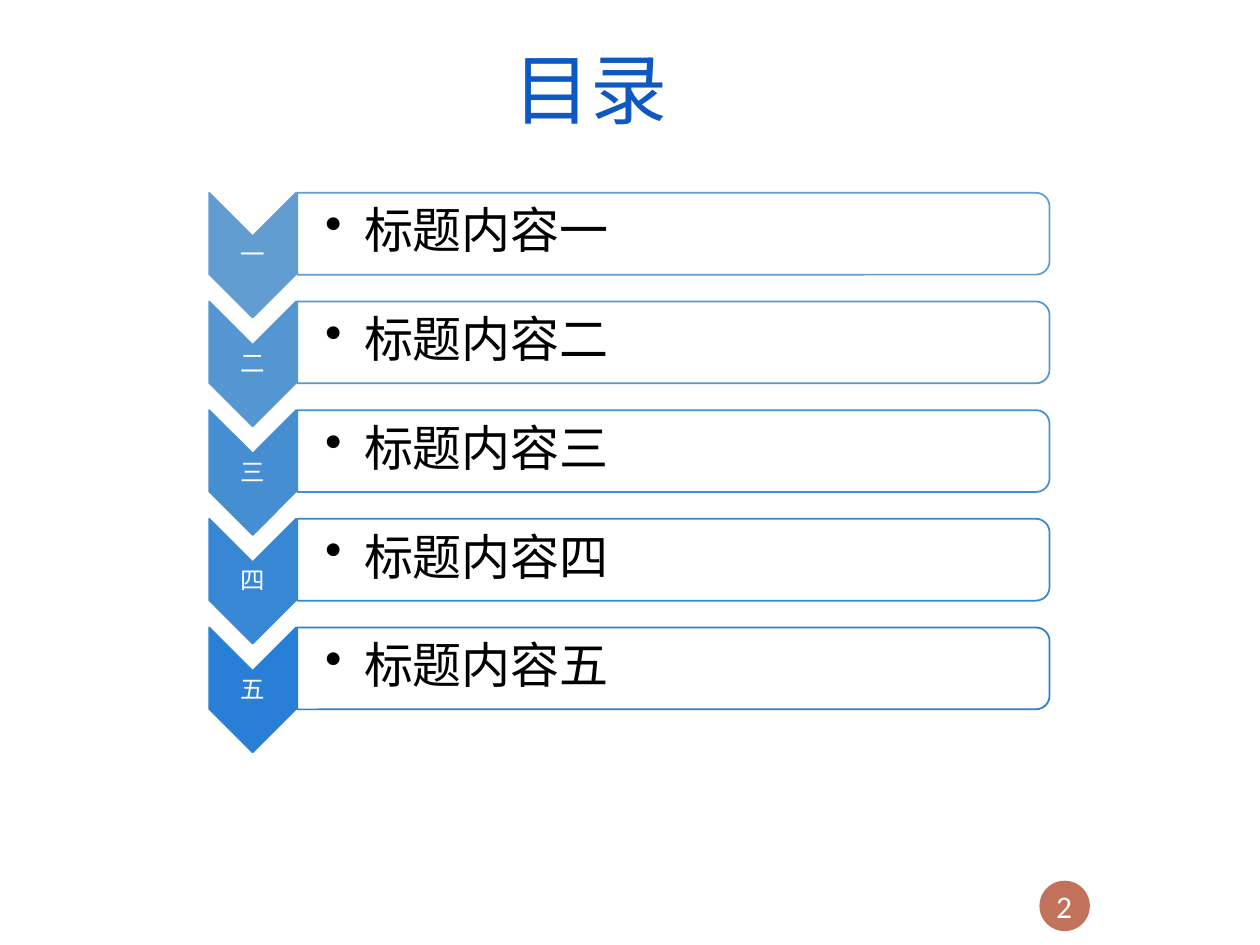
from lxml.etree import SubElement
from pptx import Presentation
from pptx.dml.color import RGBColor
from pptx.enum.shapes import MSO_SHAPE
from pptx.enum.text import MSO_ANCHOR, PP_ALIGN
from pptx.oxml.ns import qn
from pptx.util import Inches, Pt

FONT = "Calibri"
WHITE = "FFFFFF"
ENTRIES = [
    ("一", "标题内容一", "629DD1"),
    ("二", "标题内容二", "5496D2"),
    ("三", "标题内容三", "468ED2"),
    ("四", "标题内容四", "3787D4"),
    ("五", "标题内容五", "297FD5"),
]


def color(value):
    return RGBColor.from_string(value)


def add_text(shapes, text, left, top, width, height, size=14, fill=WHITE,
             align=PP_ALIGN.CENTER, anchor=MSO_ANCHOR.MIDDLE, spacing=0.9,
             insets=(0.1, 0.05, 0.1, 0.05), bullet=None, indent=0):
    box = shapes.add_textbox(Inches(left), Inches(top), Inches(width), Inches(height))
    frame = box.text_frame
    frame.word_wrap = True
    frame.vertical_anchor = anchor
    (frame.margin_left, frame.margin_top,
     frame.margin_right, frame.margin_bottom) = map(Inches, insets)
    paragraph = frame.paragraphs[0]
    paragraph.alignment = align
    paragraph.line_spacing = spacing
    if bullet:
        properties = paragraph._p.get_or_add_pPr()
        properties.set("marL", str(Inches(indent)))
        properties.set("indent", str(-Inches(indent)))
        SubElement(properties, qn("a:buChar")).set("char", bullet)
    run = paragraph.add_run()
    run.text = text
    run.font.name = FONT
    run.font.size = Pt(size)
    run.font.color.rgb = color(fill)


def add_figure(shapes, kind, left, top, width, height, fill, line=None,
               opacity=None, quarter_turn=False):
    """Place a preset shape so that its drawn outline fills the given box."""
    if quarter_turn:
        left, top = left + (width - height) / 2, top + (height - width) / 2
        width, height = height, width
    shape = shapes.add_shape(kind, Inches(left), Inches(top), Inches(width), Inches(height))
    shape.rotation = 90 if quarter_turn else 0
    shape.shadow.inherit = False
    shape.fill.solid()
    shape.fill.fore_color.rgb = color(fill)
    if opacity is not None:
        fill_color = shape._element.spPr.find(qn("a:solidFill"))[0]
        SubElement(fill_color, qn("a:alpha")).set("val", str(opacity * 1000))
    if line:
        shape.line.color.rgb = color(line)
        shape.line.width = Pt(1)
    else:
        shape.line.fill.background()


def add_entry(shapes, number, title, accent, left, top, width):
    marker_width, marker_height, panel_height = 0.69, 0.99, 0.65
    panel_left = left + marker_width + 0.01
    panel_width = width - marker_width - 0.01
    # Numbered chevron pointing down
    add_figure(shapes, MSO_SHAPE.CHEVRON, left, top, marker_width, marker_height,
               accent, line=accent, quarter_turn=True)
    add_text(shapes, number, left, top + 0.35, marker_width, 0.3, insets=(0.01,) * 4)
    # Title panel rounded on the right
    add_figure(shapes, MSO_SHAPE.ROUND_2_SAME_RECTANGLE, panel_left, top, panel_width,
               panel_height, WHITE, line=accent, opacity=90, quarter_turn=True)
    add_text(shapes, title, panel_left, top + 0.03, panel_width - 0.03, 0.58, size=28,
             fill="000000", align=PP_ALIGN.LEFT, insets=(0.22, 0.02, 0.02, 0.02),
             bullet="•", indent=0.31)


def add_contents(slide, left, top, width, pitch):
    group = slide.shapes.add_group_shape()
    for index, (number, title, accent) in enumerate(ENTRIES):
        add_entry(group.shapes, number, title, accent, left, top + index * pitch, width)


def add_page_number(slide, number, left, top, size):
    add_figure(slide.shapes, MSO_SHAPE.OVAL, left, top, size, size, "C2715A")
    add_text(slide.shapes, number, left - 0.15, top, size + 0.29, size, size=18,
             anchor=MSO_ANCHOR.TOP, spacing=1.0)


def main():
    presentation = Presentation()
    presentation.slide_width, presentation.slide_height = Inches(10), Inches(7.5)
    slide = presentation.slides.add_slide(presentation.slide_layouts[6])
    add_text(slide.shapes, "目录", 1.4, 0.18, 6.57, 1.12, size=44, fill="0E58C4")
    add_contents(slide, left=1.66, top=1.53, width=6.67, pitch=0.8625)
    add_page_number(slide, "2", left=8.25, top=6.99, size=0.4)
    presentation.save("out.pptx")


if __name__ == "__main__":
    main()
